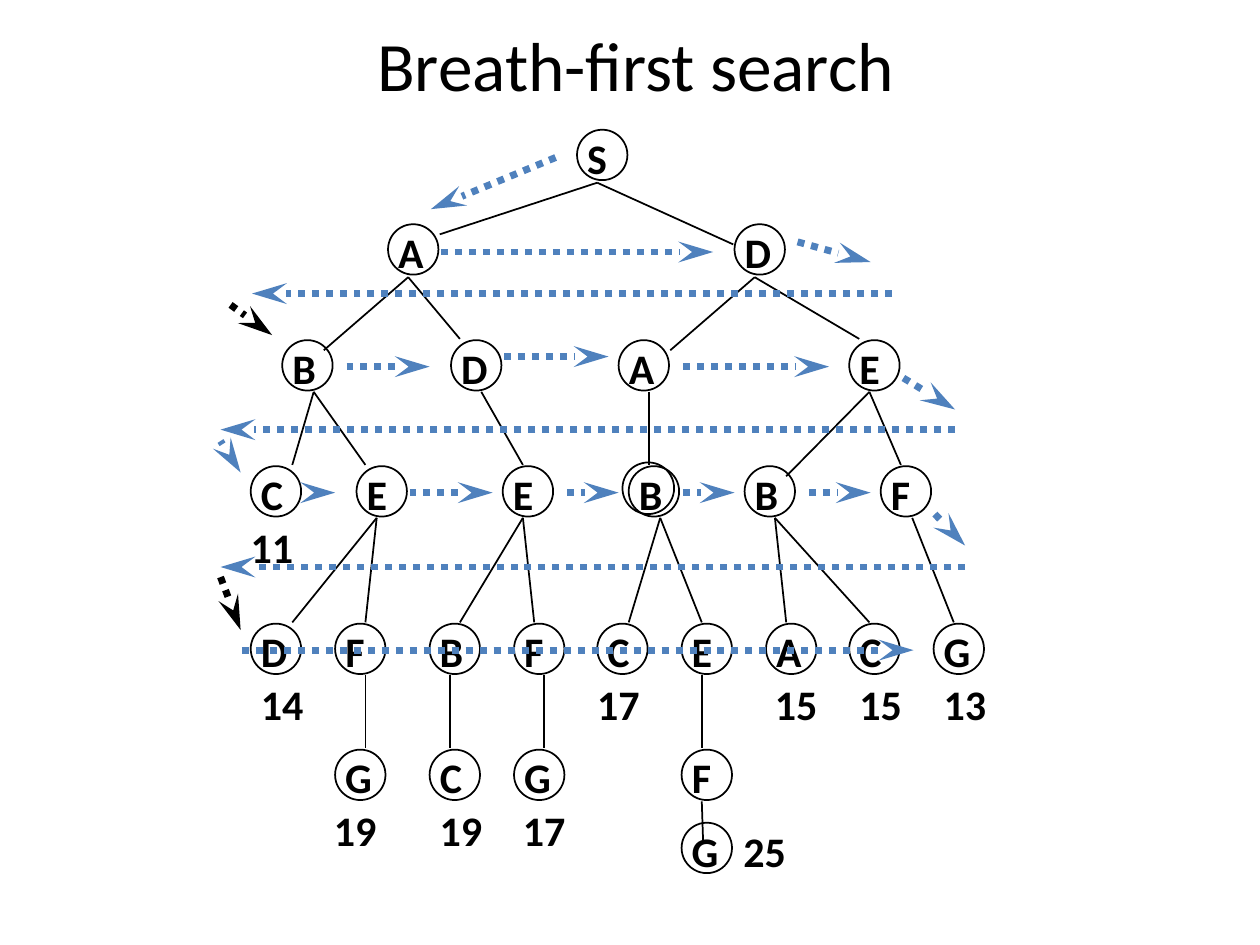
from typing import NamedTuple

from lxml import etree
from pptx import Presentation
from pptx.dml.color import RGBColor
from pptx.enum.dml import MSO_LINE
from pptx.enum.shapes import MSO_CONNECTOR, MSO_SHAPE
from pptx.enum.text import MSO_ANCHOR, MSO_AUTO_SIZE, PP_ALIGN
from pptx.oxml.ns import qn
from pptx.util import Inches, Pt

STRAIGHT = MSO_CONNECTOR.STRAIGHT
OVAL = MSO_SHAPE.OVAL
DOTTED = MSO_LINE.ROUND_DOT  # written as sysDot
BLACK = RGBColor(0x00, 0x00, 0x00)
BLUE = RGBColor(0x4F, 0x81, 0xBD)
FONT = "Calibri"
NODE_SIZE = 0.4
LABEL_HEIGHT = 0.4
COST_WIDTH = 0.64
LETTER_WIDTHS = {"S": 0.49, "A": 0.55, "B": 0.53, "C": 0.55,
                 "D": 0.55, "E": 0.53, "F": 0.51, "G": 0.56}


class Point(NamedTuple):
    x: float
    y: float


class Level(NamedTuple):
    top: float
    letters: str
    lefts: list[float]


class Branch(NamedTuple):
    start: Point
    ends: list[Point]


class Cost(NamedTuple):
    left: float
    top: float
    value: str


class Step(NamedTuple):
    start: Point
    end: Point
    color: RGBColor = BLUE


LEVELS = [
    Level(1.03, "S", [4.58]),
    Level(1.78, "AD", [3.08, 5.83]),
    Level(2.7, "BDAE", [2.24, 3.58, 4.91, 6.74]),
    Level(3.7, "CEEBBF", [1.99, 2.83, 3.99, 4.99, 5.91, 6.99]),
    Level(4.95, "DFBFCEACG",
          [1.99, 2.66, 3.41, 4.08, 4.74, 5.41, 6.08, 6.74, 7.41]),
    Level(5.95, "GCGF", [2.66, 3.41, 4.08, 5.41]),
    Level(6.53, "G", [5.41]),
]

BRANCHES = [
    Branch(Point(4.74, 1.45), [Point(3.49, 1.86), Point(5.82, 1.94)]),
    Branch(Point(3.24, 2.2), [Point(2.57, 2.78), Point(3.65, 2.69)]),
    Branch(Point(5.99, 2.2), [Point(5.32, 2.78), Point(6.82, 2.69)]),
    Branch(Point(2.49, 3.11), [Point(2.32, 3.69), Point(2.9, 3.69)]),
    Branch(Point(3.82, 3.11), [Point(4.15, 3.69)]),
    Branch(Point(5.15, 3.11), [Point(5.15, 3.69)]),
    Branch(Point(6.9, 3.11), [Point(6.24, 3.78), Point(7.15, 3.69)]),
    Branch(Point(2.99, 4.11), [Point(2.32, 4.94), Point(2.9, 4.94)]),
    Branch(Point(4.15, 4.11), [Point(3.65, 4.94), Point(4.24, 4.94)]),
    Branch(Point(5.24, 4.11), [Point(4.99, 4.94), Point(5.57, 4.94)]),
    Branch(Point(6.15, 4.11), [Point(6.24, 4.94), Point(6.9, 4.94)]),
    Branch(Point(7.24, 4.11), [Point(7.57, 4.94)]),
    *(Branch(Point(x, 5.36), [Point(x, 5.94)])
      for x in (2.9, 3.57, 4.32, 5.57)),
    Branch(Point(5.57, 6.36), [Point(5.58, 6.67)]),
]

COSTS = [
    Cost(1.92, 4.17, "11"),
    Cost(2, 5.42, "14"), Cost(4.67, 5.42, "17"), Cost(6.08, 5.42, "15"),
    Cost(6.75, 5.42, "15"), Cost(7.42, 5.42, "13"),
    Cost(2.58, 6.42, "19"), Cost(3.42, 6.42, "19"), Cost(4.08, 6.42, "17"),
    Cost(5.83, 6.58, "25"),
]

STEPS = [
    Step(Point(4.41, 1.25), Point(3.42, 1.66)),
    Step(Point(3.5, 2), Point(5.66, 2)),
    Step(Point(6.33, 1.92), Point(6.91, 2.08)),
    Step(Point(7.08, 2.33), Point(2, 2.33)),
    Step(Point(1.83, 2.42), Point(2.16, 2.66), BLACK),
    Step(Point(2.75, 2.91), Point(3.41, 2.91)),
    Step(Point(4, 2.83), Point(4.83, 2.83)),
    Step(Point(5.42, 2.91), Point(6.58, 2.91)),
    Step(Point(7.17, 3), Point(7.58, 3.25)),
    Step(Point(7.58, 3.41), Point(1.75, 3.41)),
    Step(Point(1.75, 3.5), Point(1.91, 3.75)),
    *(Step(Point(left, 3.91), Point(right, 3.91))
      for left, right in ((2.42, 2.66), (3.25, 3.91), (4.5, 4.91),
                          (5.42, 5.83), (6.42, 6.91))),
    Step(Point(7.42, 4.08), Point(7.66, 4.33)),
    Step(Point(7.66, 4.5), Point(1.75, 4.5)),
    Step(Point(1.75, 4.58), Point(1.91, 5), BLACK),
    Step(Point(1.92, 5.16), Point(7.25, 5.16)),
]


def add_circle(slide, left: float, top: float, size: float = NODE_SIZE) -> None:
    circle = slide.shapes.add_shape(
        OVAL, Inches(left), Inches(top), Inches(size), Inches(size))
    circle.shadow.inherit = False
    circle.fill.background()
    circle.line.color.rgb = BLACK
    circle.line.width = Pt(1)


def add_label(slide, left: float, top: float, width: float, text: str) -> None:
    box = slide.shapes.add_textbox(
        Inches(left), Inches(top), Inches(width), Inches(LABEL_HEIGHT))
    frame = box.text_frame
    frame.text = text
    frame.word_wrap = False
    frame.auto_size = MSO_AUTO_SIZE.SHAPE_TO_FIT_TEXT
    frame.margin_left = frame.margin_right = Inches(0.07)
    frame.margin_top = frame.margin_bottom = Inches(0.03)
    paragraph = frame.paragraphs[0]
    paragraph.line_spacing = 0.85
    format_font(paragraph.runs[0].font, 24, True)


def format_font(font, size: float, bold: bool) -> None:
    font.name = FONT
    font.size = Pt(size)
    font.bold = bold
    font.color.rgb = BLACK


def add_line(slide, start: Point, end: Point, color: RGBColor, width: float):
    connector = slide.shapes.add_connector(
        STRAIGHT, Inches(start.x), Inches(start.y), Inches(end.x), Inches(end.y))
    connector.line.color.rgb = color
    connector.line.width = Pt(width)
    etree.SubElement(connector.element.spPr, qn("a:effectLst"))
    return connector


def add_step(slide, step: Step) -> None:
    connector = add_line(slide, step.start, step.end, step.color, 4)
    connector.line.dash_style = DOTTED
    etree.SubElement(connector.line._get_or_add_ln(), qn("a:tailEnd"),
                     type="stealth", w="med", len="lg")


def main() -> None:
    presentation = Presentation()
    presentation.slide_width = Inches(10)
    presentation.slide_height = Inches(7.5)
    slide = presentation.slides.add_slide(presentation.slide_layouts[5])

    # Title
    title = slide.shapes.title
    title.left, title.top = Inches(0.92), Inches(0.17)
    title.width, title.height = Inches(8.25), Inches(0.67)
    title.text_frame.text = "Breath-first search"
    title.text_frame.vertical_anchor = MSO_ANCHOR.MIDDLE
    paragraph = title.text_frame.paragraphs[0]
    paragraph.alignment = PP_ALIGN.CENTER
    format_font(paragraph.runs[0].font, 39.6, False)

    # Search tree
    for branch in BRANCHES:
        for end in branch.ends:
            add_line(slide, branch.start, end, BLACK, 1)
    for level in LEVELS:
        for letter, left in zip(level.letters, level.lefts):
            add_circle(slide, left, level.top)
            add_label(slide, left + 0.01, level.top + 0.05,
                      LETTER_WIDTHS[letter], letter)
    add_circle(slide, 4.94, 3.67, 0.41)  # second ring around B

    # Path costs
    for cost in COSTS:
        add_label(slide, cost.left, cost.top, COST_WIDTH, cost.value)

    # Order of the visits
    for step in STEPS:
        add_step(slide, step)

    presentation.save("out.pptx")


if __name__ == "__main__":
    main()
